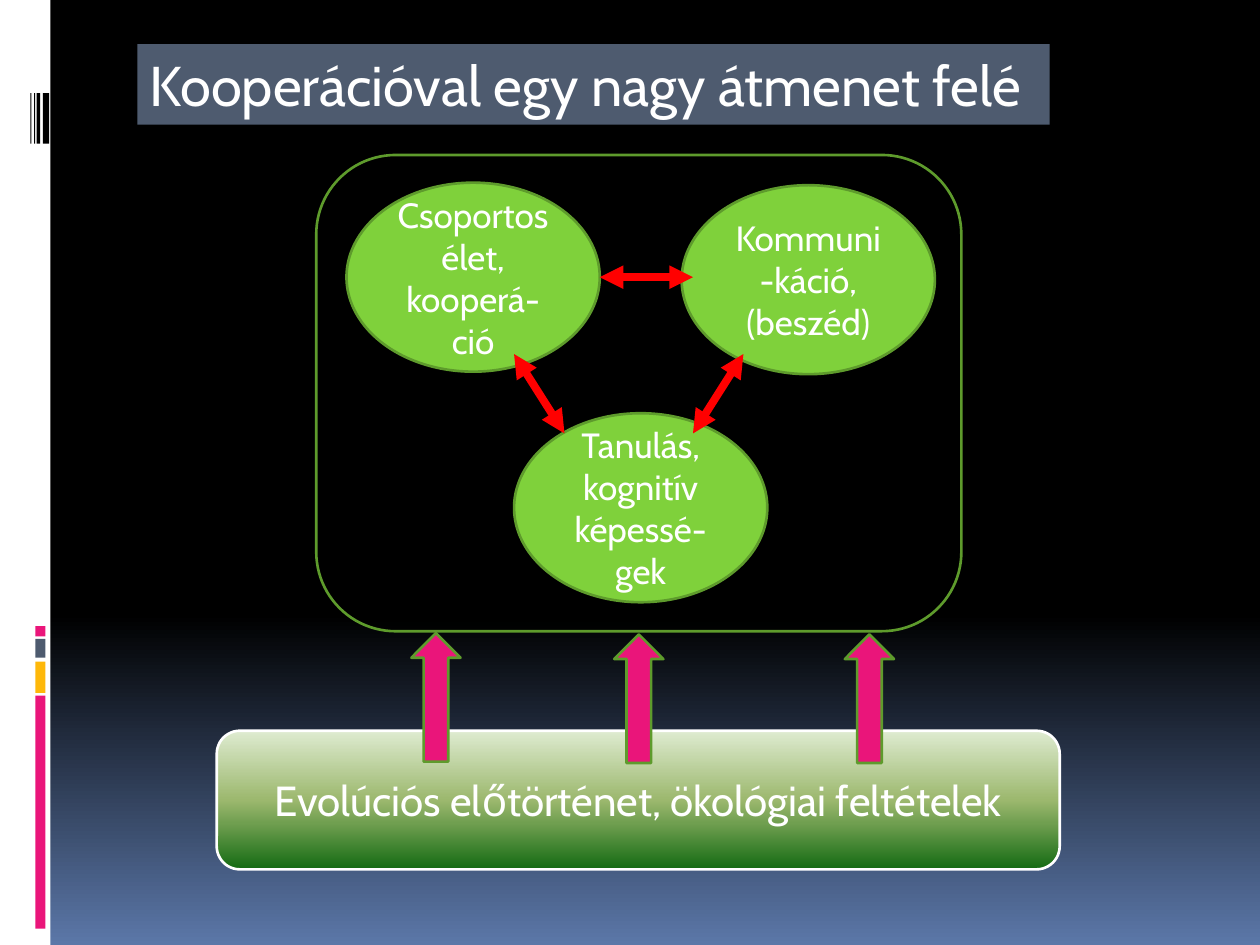
from pptx import Presentation
from pptx.dml.color import RGBColor
from pptx.enum.shapes import MSO_CONNECTOR, MSO_SHAPE
from pptx.enum.text import MSO_ANCHOR, MSO_AUTO_SIZE, PP_ALIGN
from pptx.oxml.ns import qn
from pptx.util import Inches, Pt
from lxml import etree

RECT, ROUND = MSO_SHAPE.RECTANGLE, MSO_SHAPE.ROUNDED_RECTANGLE
OVAL, ARROW = MSO_SHAPE.OVAL, MSO_SHAPE.RIGHT_ARROW
LINE = MSO_CONNECTOR.STRAIGHT
MID, LEFT, CENTER = MSO_ANCHOR.MIDDLE, PP_ALIGN.LEFT, PP_ALIGN.CENTER
FIXED = MSO_AUTO_SIZE.NONE

FONT = "Cabin"
WHITE, BLACK, RED = "FFFFFF", "000000", "FF0000"
PINK, GOLD, SLATE = "EA157A", "FEB80A", "4E5B6F"
GREEN, EDGE = "7FD13B", "5E9B2C"

TITLE = "Kooperációval egy nagy átmenet felé"
BASE = "Evolúciós előtörténet, ökológiai feltételek"
SKY = [(0, BLACK), (65, BLACK), (100, "5B77A8")]
MOSS = [(0, "DEEBD0"), (50, "9CB86E"), (100, "156B13")]
BARS = [(0.34, 0.05), (0.29, 0.03), (0.27, 0.01), (0.24, 0.01)]
BLOCKS = [(5.52, 1.85, PINK), (5.25, 0.25, GOLD),
          (5.07, 0.15, SLATE), (4.97, 0.08, PINK)]
OVALS = [
    (2.75, 1.45, ["Csoportos élet,", "kooperá-ció"]),
    (5.41, 1.47, ["Kommuni-káció,", "(beszéd)"]),
    (4.08, 3.28, ["Tanulás, kognitív képessé-gek"]),
]
LINKS = [(4.76, 2.2, 5.5, 2.2), (5.9, 2.81, 5.5, 3.44),
         (4.08, 2.81, 4.48, 3.44)]
RISERS = [(2.95, 5.34), (4.56, 5.35), (6.39, 5.35)]


def color(code):
    return RGBColor.from_string(code)


def child(root, tag, **attrs):
    return etree.SubElement(root, qn(tag), attrs)


def blend(fill, root, stops):
    fill.gradient()
    fill.gradient_angle = 270
    group = root.find(".//" + qn("a:gsLst"))
    for old in list(group):
        group.remove(old)
    for spot, code in stops:
        stop = child(group, "a:gs", pos=str(spot * 1000))
        child(stop, "a:srgbClr", val=code)


def paint(shape, fill, line=None):
    shape.fill.solid()
    shape.fill.fore_color.rgb = color(fill)
    if line:
        shape.line.color.rgb = color(line)
        shape.line.width = Pt(1.5)
    else:
        shape.line.fill.background()


def add(kind, box, fill, line=None):
    shape = slide.shapes.add_shape(kind, *map(Inches, box))
    shape.shadow.inherit = False
    paint(shape, fill, line)
    return shape


def write(shape, lines, size, align=CENTER, wrap=True):
    frame = shape.text_frame
    frame.text = "\n".join(lines)
    form = {"word_wrap": wrap, "auto_size": FIXED, "vertical_anchor": MID}
    for name, value in form.items():
        setattr(frame, name, value)
    for para in frame.paragraphs:
        para.alignment = align
        font = para.runs[0].font
        for name, value in {"name": FONT, "size": Pt(size), "bold": False}.items():
            setattr(font, name, value)
        font.color.rgb = color(WHITE)


def link(ends):
    wire = slide.shapes.add_connector(LINE, *map(Inches, ends))
    wire.line.color.rgb = color(RED)
    wire.line.width = Pt(4.5)
    props = wire.element.spPr
    pen = props.find(qn("a:ln"))
    for tag in ("a:headEnd", "a:tailEnd"):
        child(pen, tag, type="triangle")
    child(props, "a:effectLst")


deck = Presentation()
deck.slide_width, deck.slide_height = Inches(10), Inches(7.5)
slide = deck.slides.add_slide(deck.slide_layouts[5])
blend(slide.background.fill, slide.element, SKY)

add(RECT, (0, 0, 0.4, 7.5), WHITE)
for x, wide in BARS:
    add(RECT, (x, 0.74, wide, 0.4), BLACK)
for y, tall, code in BLOCKS:
    add(RECT, (0.28, y, 0.08, tall), code)

frame = add(ROUND, (2.51, 1.23, 5.12, 3.78), BLACK, EDGE)
tint = frame.element.spPr.find(qn("a:solidFill"))[0]
child(tint, "a:alpha", val="66000")
for x, y, lines in OVALS:
    write(add(OVAL, (x, y, 2.01, 1.5), GREEN, EDGE), lines, 20)
for ends in LINKS:
    link(ends)

base = add(ROUND, (1.72, 5.8, 6.69, 1.1), WHITE, WHITE)
blend(base.fill, base.element, MOSS)
write(base, [BASE], 24)
for x, y in RISERS:
    add(ARROW, (x, y, 1.02, 0.39), PINK, EDGE).rotation = 270

title = slide.shapes.title
place = dict(zip(("left", "top", "width", "height"), (1.09, 0.35, 7.24, 0.64)))
for name, value in place.items():
    setattr(title, name, Inches(value))
paint(title, SLATE)
write(title, [TITLE], 32, LEFT, False)

deck.save("out.pptx")
